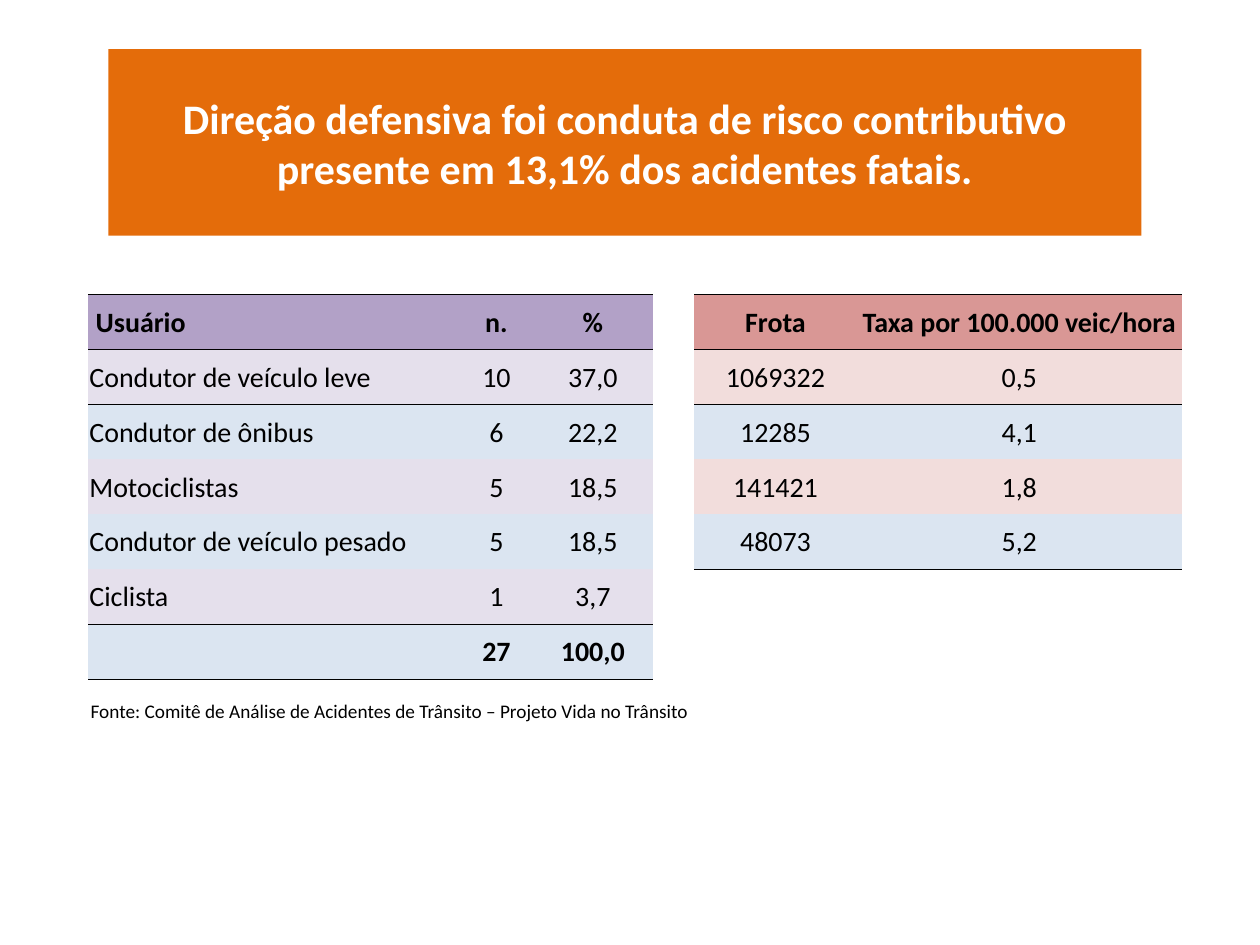
from lxml import etree
from pptx import Presentation
from pptx import util as u
from pptx.dml.color import RGBColor
from pptx.enum import shapes, text
from pptx.oxml.ns import qn

HUES = {
    "title": "E46C0A", "white": "FFFFFF", "black": "000000",
    "users": "B2A1C7", "lilac": "E5E0EC",
    "fleet": "D99795", "pink": "F2DDDC", "blue": "DBE5F1",
}
NO_GRID = "{2D5ABB26-0587-4C30-8999-92F81FD0307C}"


def write(frame, words, size=16, bold=False, hue="black", align=text.PP_ALIGN.CENTER):
    para = frame.paragraphs[0]
    para.alignment = align
    run = para.add_run()
    run.text = words
    run.font.name = "Calibri"
    run.font.size = u.Pt(size)
    run.font.bold = bold
    run.font.color.rgb = RGBColor.from_string(HUES[hue])


def rule(cell, side):
    """Draw a thin black border; call before the cell is filled."""
    line = etree.SubElement(cell._tc.get_or_add_tcPr(), qn("a:" + side), w=str(u.Pt(0.5)))
    fill = etree.SubElement(line, qn("a:solidFill"))
    etree.SubElement(fill, qn("a:srgbClr"), val=HUES["black"])


deck = Presentation()
deck.slide_width, deck.slide_height = u.Inches(10), u.Inches(7.5)
slide = deck.slides.add_slide(deck.slide_layouts[6])

# Title banner
title = slide.shapes.add_shape(
    shapes.MSO_SHAPE.RECTANGLE, u.Inches(0.86), u.Inches(0.39), u.Inches(8.2), u.Inches(1.48))
title.shadow.inherit = False
title.fill.solid()
title.fill.fore_color.rgb = RGBColor.from_string(HUES["title"])
title.line.fill.background()
title.text_frame.word_wrap = True
title.text_frame.vertical_anchor = text.MSO_ANCHOR.MIDDLE
write(title.text_frame,
      "Direção defensiva foi conduta de risco contributivo presente em 13,1% dos acidentes fatais.",
      size=24, bold=True, hue="white")

# Table: users on the left, fleet and rate on the right, a bare column between
rows = [
    ("Usuário", "n.", "%", "", "Frota", "Taxa por 100.000 veic/hora"),
    ("Condutor de veículo leve", "10", "37,0", "", "1069322", "0,5"),
    ("Condutor de ônibus", "6", "22,2", "", "12285", "4,1"),
    ("Motociclistas", "5", "18,5", "", "141421", "1,8"),
    ("Condutor de veículo pesado", "5", "18,5", "", "48073", "5,2"),
    ("Ciclista", "1", "3,7", "", "", ""),
    ("", "27", "100,0", "", "", ""),
]
widths = [2.95, 0.58, 0.95, 0.33, 1.29, 2.58]
high = u.Inches(3.05)
frame = slide.shapes.add_table(
    len(rows), len(widths), u.Inches(0.7), u.Inches(2.34), u.Inches(sum(widths)), high)
table = frame.table
table.first_row = table.horz_banding = False
table._tbl.tblPr.find(qn("a:tableStyleId")).text = NO_GRID
for col, width in zip(table.columns, widths):
    col.width = u.Inches(width)

last = len(rows) - 1
for r, row in enumerate(rows):
    table.rows[r].height = int(high / len(rows))
    for c, words in enumerate(row):
        cell = table.cell(r, c)
        cell.vertical_anchor = text.MSO_ANCHOR.MIDDLE
        cell.margin_left = cell.margin_right = cell.margin_top = u.Inches(0.01)
        cell.margin_bottom = 0
        left = c < 3
        end = last if left else 4
        if c == 3 or r > end:
            cell.fill.background()
            continue
        if r in (0, 1) or (left and r == last):
            rule(cell, "lnT")
        if r in (0, end) or (left and r == last - 1):
            rule(cell, "lnB")
        head, band = ("users", "lilac") if left else ("fleet", "pink")
        hue = head if r == 0 else band if r % 2 else "blue"
        cell.fill.solid()
        cell.fill.fore_color.rgb = RGBColor.from_string(HUES[hue])
        if words:
            align = text.PP_ALIGN.CENTER if c else text.PP_ALIGN.LEFT
            write(cell.text_frame, words, bold=r in (0, last), align=align)
table.cell(0, 0).margin_left = u.Inches(0.06)

# Source note
note = slide.shapes.add_textbox(u.Inches(0.62), u.Inches(5.5), u.Inches(6.02), u.Inches(0.29))
note.text_frame.word_wrap = True
write(note.text_frame,
      "Fonte: Comitê de Análise de Acidentes de Trânsito – Projeto Vida no Trânsito",
      size=11, align=text.PP_ALIGN.LEFT)

deck.save("out.pptx")
